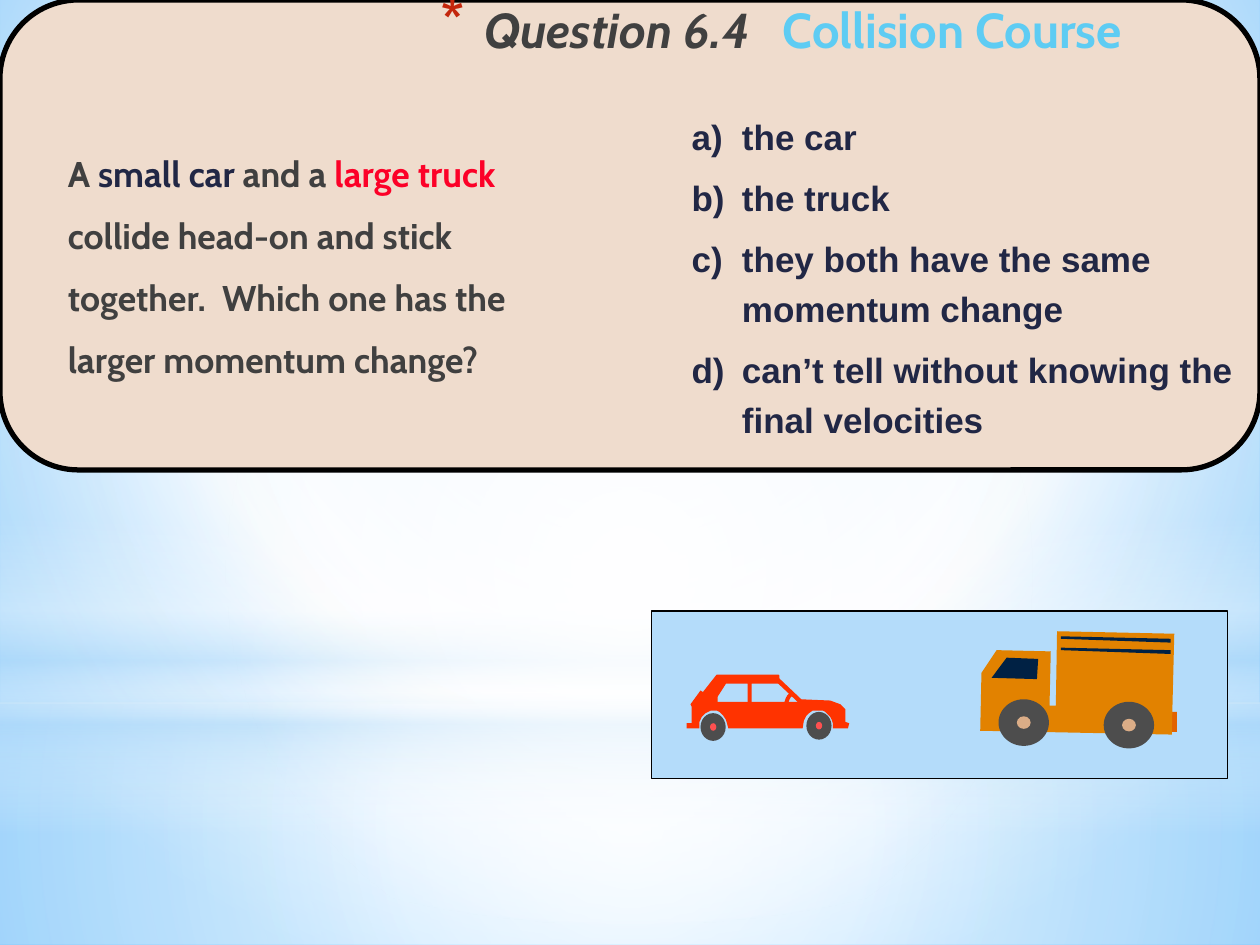
from pptx import Presentation, util as u
from pptx.dml.color import RGBColor
from pptx.enum import shapes, text
from pptx.oxml import ns, parse_xml

WIDTH, HEIGHT = u.Inches(10), u.Inches(7.5)
COLUMNS, ROWS = 100, 75
CENTRE = (50, 50, 50, 50)
OVAL = shapes.MSO_SHAPE.OVAL
RECTANGLE = shapes.MSO_SHAPE.RECTANGLE

INK, GREY, BLACK = "212745", "404040", "000000"
SKY, WHITE = "B4DCFA", "FFFFFF"
RED, ORANGE, NAVY, TYRE = "FF3300", "E28200", "002144", "4D4D4D"

TITLE_STOPS = [(0, BLACK, 100), (40, GREY, 100), (100, INK, 65)]
BACKDROP_STOPS = [(0, "9ED5FF", 100), (60, WHITE, 100), (100, "5BB9FF", 100)]
# Shape kind, (left, top, width, height), stops, focus (None for a vertical sweep)
GLOWS = [
    (RECTANGLE, (0, 55.8, 100, 19.2),
     [(0, WHITE, 91), (37, WHITE, 76), (100, SKY, 79)], CENTRE),
    (RECTANGLE, (0, 0, 100, 55.8),
     [(0, WHITE, 89), (48, WHITE, 62), (100, SKY, 79)], CENTRE),
    (RECTANGLE, (0, 41.2, 100, 25),
     [(0, WHITE, 0), (29, WHITE, 30), (45, SKY, 40), (55, WHITE, 26),
      (65, SKY, 60), (100, WHITE, 0)], None),
    (OVAL, (0, 17.5, 100, 55.8), [(0, WHITE, 100), (56, WHITE, 0)], CENTRE),
]

TRUCK_BODY = [(77.8, 58), (93, 58.3), (93.2, 50.3), (83.9, 50.1), (83.8, 56),
              (83.3, 56), (83.4, 51.7), (79.1, 51.6), (77.9, 53.4)]
TRUCK_WINDOW = [(78.7, 53.8), (82.3, 53.9), (82.4, 52.3), (79.9, 52.2)]
CAR_BODY = [
    (67.3, 57.8), (66.1, 57.8), (66.1, 57.4), (66, 57.1), (65.9, 56.9),
    (65.7, 56.7), (65.5, 56.5), (65.3, 56.4), (65, 56.4), (64.5, 56.4),
    (64.2, 56.6), (64, 56.8), (63.8, 57.2), (63.7, 57.8), (57.8, 57.8),
    (57.7, 57.4), (57.6, 57.1), (57.4, 56.8), (57.1, 56.5), (56.9, 56.4),
    (56.4, 56.4), (56, 56.6), (55.7, 56.9), (55.5, 57.3), (55.5, 57.8),
    (54.5, 57.8), (54.5, 57.4), (54.9, 57.4), (54.9, 56.1), (54.8, 55.9),
    (55.6, 54.8), (55.9, 55), (56.9, 55.7), (63.3, 55.7), (61.7, 54.2),
    (61.7, 53.7), (63.6, 55.5), (65.9, 55.6), (66.7, 55.9), (67.1, 56.3),
    (67.1, 57.3), (67.4, 57.4)]
CAR_FRAME = [(61.8, 53.6), (61.8, 54.2), (59.6, 54.2), (59.6, 55.8), (59.4, 55.8),
             (59.4, 54.2), (57.6, 54.2), (56.9, 55.3), (56.9, 55.8), (55.8, 55),
             (56.9, 53.6)]
STEERING_WHEEL = [(62.8, 55.1), (62.6, 55.3), (62.5, 55.5), (62.4, 55.8)]

OPTIONS = ["a)\tthe car", "b)\tthe truck",
           "c)\tthey both have the same momentum change",
           "d)\tcan’t tell without knowing the final velocities"]


def across(columns):
    return u.Emu(round(columns * WIDTH / COLUMNS))


def down(rows):
    return u.Emu(round(rows * HEIGHT / ROWS))


def place(area):
    left, top, width, height = area
    return across(left), down(top), across(width), down(height)


def colour(hex_code):
    return RGBColor.from_string(hex_code)


def make_gradient(solid, stops, focus=None):
    """Swap a solid fill element for a gradient; focus gives a circular one."""
    stop_xml = "".join(
        f'<a:gs pos="{position * 1000}"><a:srgbClr val="{code}">'
        f'<a:alpha val="{opacity * 1000}"/></a:srgbClr></a:gs>'
        for position, code, opacity in stops)
    if focus:
        left, top, right, bottom = (share * 1000 for share in focus)
        direction = (f'<a:path path="circle"><a:fillToRect l="{left}" t="{top}" '
                     f'r="{right}" b="{bottom}"/></a:path>')
    else:
        direction = '<a:lin ang="5400000" scaled="0"/>'
    gradient = parse_xml(f'<a:gradFill {ns.nsdecls("a")} rotWithShape="1">'
                         f'<a:gsLst>{stop_xml}</a:gsLst>{direction}</a:gradFill>')
    solid.getparent().replace(solid, gradient)


def paint(shape, fill, line=None, weight=0.75):
    shape.shadow.inherit = False
    shape.fill.solid()
    shape.fill.fore_color.rgb = colour(fill)
    if line:
        shape.line.color.rgb = colour(line)
        shape.line.width = u.Pt(weight)
    else:
        shape.line.fill.background()
    return shape


def add_preset(parent, kind, area, fill, **outline):
    return paint(parent.shapes.add_shape(kind, *place(area)), fill, **outline)


def add_outline(parent, points, fill, close=True, **outline):
    start, *rest = [(across(x), down(y)) for x, y in points]
    builder = parent.shapes.build_freeform(*start, scale=1.0)
    builder.add_line_segments(rest, close=close)
    return paint(builder.convert_to_shape(), fill, **outline)


def add_wheel(parent, centre, tyre_size, hub_size, hub_fill):
    x, y = centre
    for (width, height), fill in ((tyre_size, TYRE), (hub_size, hub_fill)):
        area = (x - width / 2, y - height / 2, width, height)
        add_preset(parent, OVAL, area, fill)


def add_box(page, area):
    frame = page.shapes.add_textbox(*place(area)).text_frame
    frame.word_wrap = True
    return frame


def format_para(para, hang, spacing, before=0, after=0, align=None):
    para.line_spacing = spacing
    para.space_before, para.space_after = u.Pt(before), u.Pt(after)
    para.alignment = align
    properties = para._p.get_or_add_pPr()
    properties.set("marL", str(across(hang)))
    properties.set("indent", str(-across(hang)))
    return properties


def add_bullet(properties, symbol, hex_code, percent):
    for tag, content in (("buClr", f'><a:srgbClr val="{hex_code}"/></a:buClr>'),
                         ("buSzPct", f' val="{percent * 1000}"/>'),
                         ("buChar", f' char="{symbol}"/>')):
        properties.append(parse_xml(f'<a:{tag} {ns.nsdecls("a")}{content}'))


def add_span(para, words, size, font, fill, italic=False):
    span = para.add_run()
    span.text = words
    span.font.size, span.font.name = u.Pt(size), font
    span.font.bold, span.font.italic = True, italic
    span.font.fill.solid()
    span.font.fill.fore_color.rgb = colour(fill)
    return span


def add_backdrop(page):
    page.background.fill.solid()
    make_gradient(page.element.xpath(".//p:bgPr/a:solidFill")[0],
                  BACKDROP_STOPS, (20, 10, 20, 60))
    for kind, area, stops, focus in GLOWS:
        glow = add_preset(page, kind, area, WHITE)
        make_gradient(glow.element.xpath("./p:spPr/a:solidFill")[0], stops, focus)


def add_scene(page):
    scene = page.shapes.add_group_shape()
    add_preset(scene, RECTANGLE, (51.7, 48.5, 45.7, 13.3), SKY, line=BLACK)
    add_preset(scene, RECTANGLE, (92.5, 56.5, 0.9, 1.6), "E26300")
    add_outline(scene, TRUCK_BODY, ORANGE)
    add_outline(scene, TRUCK_WINDOW, NAVY)
    for centre in ((81.25, 57.35), (89.6, 57.55)):
        add_wheel(scene, centre, (4, 3.7), (1.1, 1), "DBAD87")
    for top in (50.5, 51.4):
        stripe = [(84.2, top), (84.2, top + 0.2), (92.9, top + 0.5), (92.9, top + 0.2)]
        add_outline(scene, stripe, NAVY)
    add_outline(scene, CAR_BODY, RED)
    add_outline(scene, STEERING_WHEEL, RED, close=False, line=RED, weight=2.25)
    add_outline(scene, CAR_FRAME, RED, line=RED)
    for centre in ((65, 57.6), (56.6, 57.7)):
        add_wheel(scene, centre, (2, 2.2), (0.5, 0.6), "FF5050")


def add_title(page):
    para = add_box(page, (10.2, 0, 79.8, 9.2)).paragraphs[0]
    add_bullet(format_para(para, 3.5, 0.9, align=text.PP_ALIGN.RIGHT), "*", "C3260C", 128)
    number = add_span(para, "Question 6.4   ", 28, "Cabin", GREY, italic=True)
    make_gradient(number.font._element.xpath("./a:solidFill")[0], TITLE_STOPS)
    add_span(para, "Collision Course", 28, "Cabin", "5ECCF3")


def add_options(page):
    frame = add_box(page, (53.9, 8, 46.1, 28.2))
    for index, option in enumerate(OPTIONS):
        para = frame.add_paragraph() if index else frame.paragraphs[0]
        format_para(para, 4, 1.2, before=6)
        add_span(para, option, 20, "Arial", INK)


def add_question(page):
    para = add_box(page, (0, 10, 47.3, 21.1)).paragraphs[0]
    format_para(para, 4.4, 1.45, before=4, after=3)
    for words, fill in (
            ("\tA ", GREY), ("small car", INK), (" and a ", GREY),
            ("large truck", "FC0128"),
            (" collide head-on and stick together.  Which one has the "
             "larger momentum change?", GREY)):
        add_span(para, words, 20.4, "Cabin", fill)


def main():
    deck = Presentation()
    deck.slide_width, deck.slide_height = WIDTH, HEIGHT
    page = deck.slides.add_slide(deck.slide_layouts[6])
    add_backdrop(page)
    add_scene(page)
    panel = add_preset(page, shapes.MSO_SHAPE.ROUNDED_RECTANGLE, (0, 0, 100, 37.3),
                       "EFDCCD", line=BLACK, weight=3)
    panel.adjustments[0] = 0.167
    add_title(page)
    add_options(page)
    add_question(page)
    deck.save("out.pptx")


if __name__ == "__main__":
    main()
